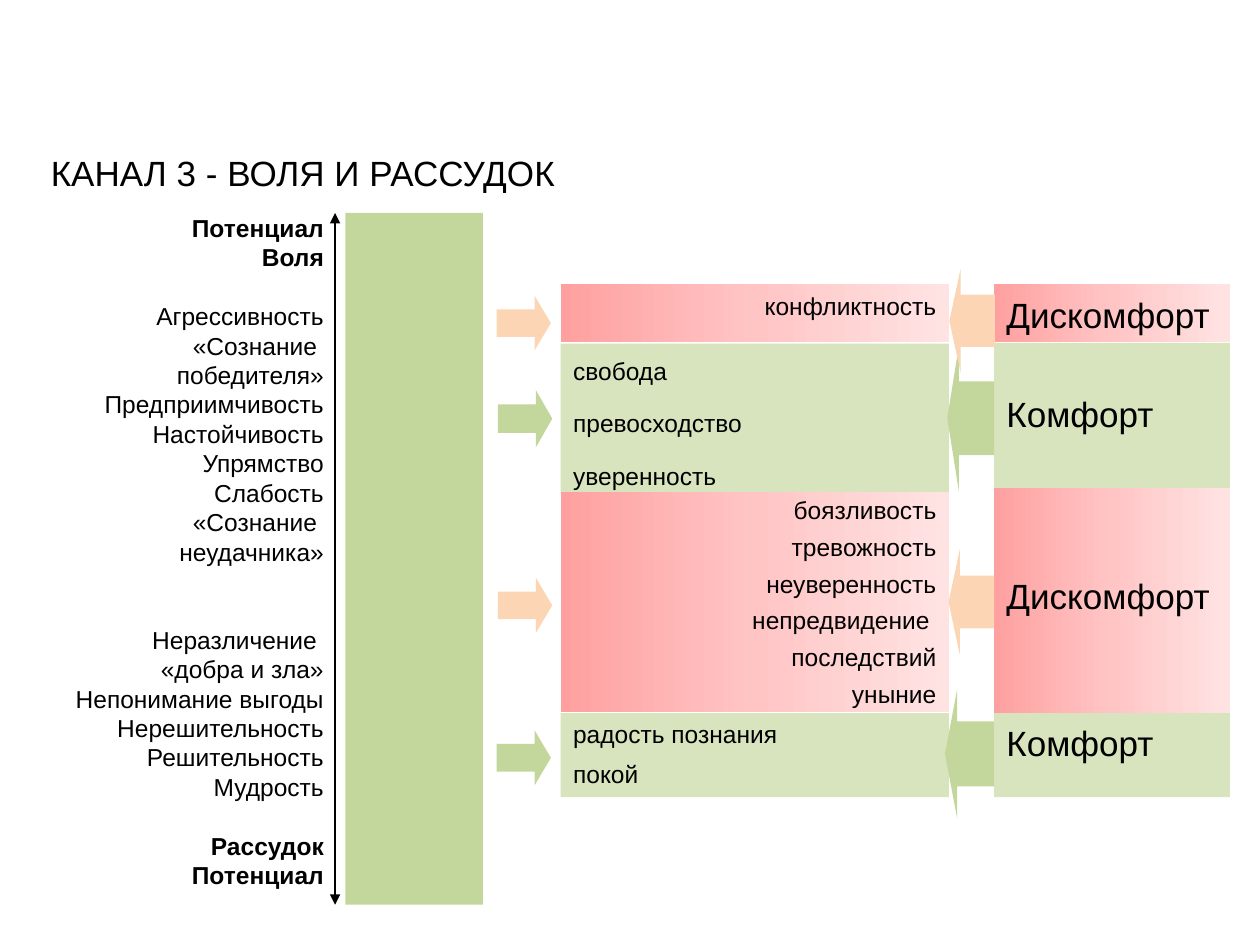
from copy import deepcopy
from dataclasses import dataclass

from pptx import Presentation
from pptx.dml.color import RGBColor
from pptx.enum import shapes, text
from pptx.oxml import ns, xmlchemy
from pptx.util import Pt

GREEN, PALE_GREEN, ORANGE, BLACK = "C3D69B", "D7E4BD", "FCD5B5", "000000"
DISCOMFORT_STOPS = ((0, "FFA0A0"), (0.5, "FFC5C5"), (1, "FFE3E3"))
FONT = "Arial"
FEELING_LEFT, FEELING_WIDTH = 320.4, 221.8
STATE_LEFT, STATE_WIDTH = 568, 134.8
SCALE_TOP, SCALE_HEIGHT = 121.7, 395.3
QUALITY_LINE = 16.8


@dataclass
class Arrow:
    left: float
    top: float
    width: float
    height: float
    head: float


@dataclass
class Row:
    """One band: its feelings, the resulting state and the two arrows."""
    comfort: bool
    feelings: list[str]
    top: float
    height: float
    state_top: float
    state_height: float
    state_inset: float
    into: Arrow
    back: Arrow
    line: float | None = None
    gap: float = 6


@dataclass
class Quality:
    label: str
    bold: bool = False
    blank_lines_after: int = 0


ROWS = [
    Row(False, ["конфликтность"], 162.5, 33.1, 162.5, 33.1, 5,
        Arrow(283.8, 169, 31, 31.3, 0.3), Arrow(542.5, 153.3, 26, 60, 0.25)),
    Row(True, ["свобода", "превосходство", "уверенность"],
        196.4, 85.4, 196, 83, 28.5,
        Arrow(284.6, 223, 31, 32.5, 0.3), Arrow(541.3, 196.9, 26.8, 84.3, 0.25),
        line=20, gap=10),
    Row(False, ["боязливость", "тревожность", "неуверенность",
                "непредвидение ", "последствий", "уныние"],
        281.2, 125.6, 279, 128.4, 49,
        Arrow(284.6, 330.3, 31, 31.3, 0.3), Arrow(542, 313.8, 26, 60.5, 0.25),
        line=15),
    Row(True, ["радость познания", "покой"], 407.5, 48, 407.5, 48, 5,
        Arrow(283.8, 417.3, 31, 31.5, 0.3), Arrow(540, 393.8, 28, 74, 0.25)),
]

QUALITIES = [
    Quality("Потенциал", True), Quality("Воля", True, 1),
    Quality("Агрессивность"), Quality("«Сознание "), Quality("победителя»"),
    Quality("Предприимчивость"), Quality("Настойчивость"), Quality("Упрямство"),
    Quality("Слабость"), Quality("«Сознание "), Quality("неудачника»", False, 2),
    Quality("Неразличение "), Quality("«добра и зла»"), Quality("Непонимание выгоды"),
    Quality("Нерешительность"), Quality("Решительность"), Quality("Мудрость", False, 1),
    Quality("Рассудок", True), Quality("Потенциал", True),
]


def color(value: str) -> RGBColor:
    return RGBColor.from_string(value)


def place(shape, left: float, top: float, width: float, height: float) -> None:
    shape.left, shape.top = Pt(left), Pt(top)
    shape.width, shape.height = Pt(width), Pt(height)


def style_para(para, size: float, align, bold: bool = False) -> None:
    para.alignment = align
    para.space_before = Pt(0)
    for span in para.runs:
        span.font.name, span.font.size, span.font.bold = FONT, Pt(size), bold
        span.font.color.rgb = color(BLACK)


def add_shape(page, kind, left: float, top: float, width: float, height: float,
              fill: str | None):
    """Add a borderless shape; without a fill colour it gets the discomfort gradient."""
    shape = page.shapes.add_shape(kind, Pt(left), Pt(top), Pt(width), Pt(height))
    shape.shadow.inherit = False
    shape.line.fill.background()
    if fill:
        shape.fill.solid()
        shape.fill.fore_color.rgb = color(fill)
        return shape
    shape.fill.gradient()
    shape.fill.gradient_angle = 0
    stops = shape.element.find(".//" + ns.qn("a:gsLst"))
    stops.append(deepcopy(stops[0]))
    for stop, (position, value) in zip(shape.fill.gradient_stops, DISCOMFORT_STOPS):
        stop.position = position
        stop.color.rgb = color(value)
    return shape


def write_lines(box, lines: list[str], size: float, align, inset: float,
                line: float | None, gap: float) -> None:
    frame = box.text_frame
    frame.word_wrap = True
    frame.vertical_anchor = text.MSO_ANCHOR.TOP
    frame.margin_top = Pt(inset)
    frame.text = "\n".join(lines)
    for para in frame.paragraphs:
        style_para(para, size, align)
        para.space_after = Pt(gap)
        if line:
            para.line_spacing = Pt(line)


def add_row_boxes(page, row: Row) -> None:
    rect = shapes.MSO_SHAPE.RECTANGLE
    fill = PALE_GREEN if row.comfort else None
    left, right = text.PP_ALIGN.LEFT, text.PP_ALIGN.RIGHT
    feelings = add_shape(page, rect, FEELING_LEFT, row.top, FEELING_WIDTH, row.height, fill)
    write_lines(feelings, row.feelings, 14, left if row.comfort else right,
                3.6, row.line, row.gap)
    state = add_shape(page, rect, STATE_LEFT, row.state_top, STATE_WIDTH,
                      row.state_height, fill)
    write_lines(state, ["Комфорт" if row.comfort else "Дискомфорт"], 20, left,
                row.state_inset, None, 6)


def add_row_arrows(page, row: Row) -> None:
    fill = GREEN if row.comfort else ORANGE
    for kind, arrow in ((shapes.MSO_SHAPE.RIGHT_ARROW, row.into),
                        (shapes.MSO_SHAPE.LEFT_ARROW, row.back)):
        shape = add_shape(page, kind, arrow.left, arrow.top, arrow.width,
                          arrow.height, fill)
        shape.adjustments[0], shape.adjustments[1] = 0.5, arrow.head


def write_title(title) -> None:
    place(title, 8.6, 66.2, 329, 44.5)
    frame = title.text_frame
    frame.word_wrap = True
    frame.auto_size = text.MSO_AUTO_SIZE.NONE
    frame.vertical_anchor = text.MSO_ANCHOR.BOTTOM
    frame.margin_bottom = Pt(0)
    frame.text = "КАНАЛ 3 - ВОЛЯ И РАССУДОК"
    style_para(frame.paragraphs[0], 20, text.PP_ALIGN.CENTER)


def write_qualities(body) -> None:
    place(body, 16.6, 118.1, 175.7, 398.9)
    frame = body.text_frame
    frame.word_wrap = True
    frame.auto_size = text.MSO_AUTO_SIZE.NONE
    frame.text = "\n".join(quality.label for quality in QUALITIES)
    for para, quality in zip(frame.paragraphs, QUALITIES):
        properties = para._p.get_or_add_pPr()
        properties.set("marL", "0")
        properties.set("indent", "0")
        xmlchemy.OxmlElement("a:buNone")
        properties.append(xmlchemy.OxmlElement("a:buNone"))
        style_para(para, 14, text.PP_ALIGN.RIGHT, quality.bold)
        para.line_spacing = Pt(QUALITY_LINE)
        para.space_after = Pt(QUALITY_LINE * quality.blank_lines_after)


def add_scale_line(page) -> None:
    line = page.shapes.add_connector(shapes.MSO_CONNECTOR.STRAIGHT, Pt(191.5),
                                     Pt(SCALE_TOP), Pt(191.5), Pt(SCALE_TOP + SCALE_HEIGHT))
    line.line.color.rgb = color(BLACK)
    line.line.width = Pt(1.5)
    for end in ("a:headEnd", "a:tailEnd"):
        arrowhead = xmlchemy.OxmlElement(end)
        arrowhead.set("type", "triangle")
        line.line._get_or_add_ln().append(arrowhead)
    line.element.spPr.append(xmlchemy.OxmlElement("a:effectLst"))


def main() -> None:
    deck = Presentation()
    deck.slide_width, deck.slide_height = Pt(720), Pt(540)
    page = deck.slides.add_slide(deck.slide_layouts[1])
    write_title(page.shapes.title)
    write_qualities(page.placeholders[1])
    add_shape(page, shapes.MSO_SHAPE.RECTANGLE, 197.4, SCALE_TOP, 78.6, SCALE_HEIGHT, GREEN)
    for row in ROWS:
        add_row_boxes(page, row)
    for row in reversed(ROWS):
        add_row_arrows(page, row)
    add_scale_line(page)
    deck.save("out.pptx")


if __name__ == "__main__":
    main()
